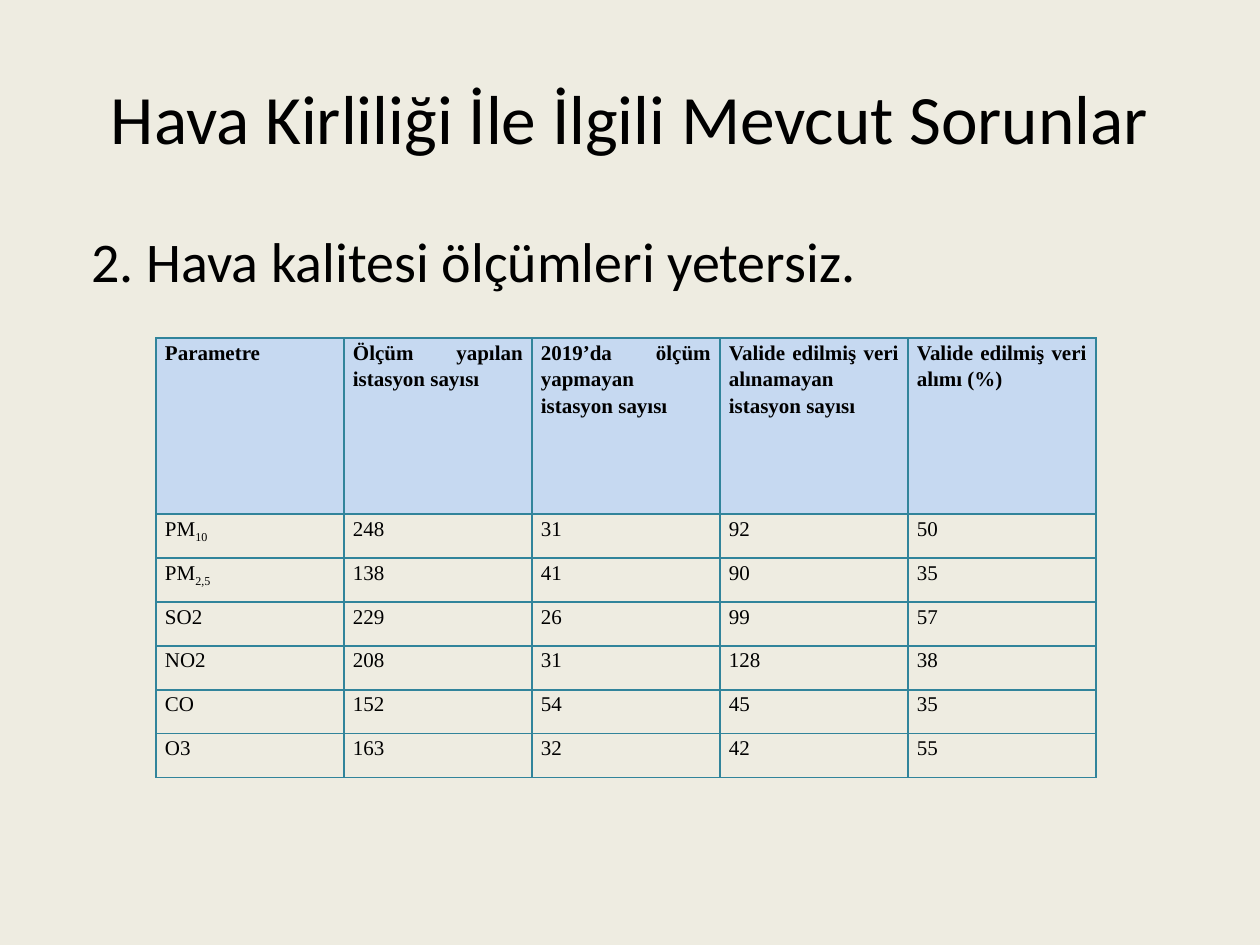
from dataclasses import dataclass
from lxml import etree
from pptx import Presentation
from pptx.dml.color import RGBColor
from pptx.enum.text import MSO_ANCHOR, PP_ALIGN
from pptx.oxml.ns import qn
from pptx.util import Pt


@dataclass(frozen=True)
class Theme:
    background: RGBColor = RGBColor.from_string("EEECE1")
    ink: RGBColor = RGBColor.from_string("000000")
    header: RGBColor = RGBColor.from_string("C6D9F1")
    border: str = "31849B"
    heading_font: str = "Calibri"
    table_font: str = "Times New Roman"
    title_size: float = 39.6
    body_size: float = 32
    table_size: float = 12


theme = Theme()
SCALE = 914400 / 126


def px(length):
    return round(length * SCALE)


def add_run(paragraph, text, font, size, bold=False):
    run = paragraph.add_run()
    run.text = text
    for name, value in {"name": font, "size": Pt(size), "bold": bold}.items():
        setattr(run.font, name, value)
    run.font.color.rgb = theme.ink
    return run


prs = Presentation()
prs.slide_width, prs.slide_height = px(1260), px(945)
slide = prs.slides.add_slide(prs.slide_layouts[6])
slide.background.fill.solid()
slide.background.fill.fore_color.rgb = theme.background

headings = [
    ("Hava Kirliliği İle İlgili Mevcut Sorunlar", 38, 158, theme.title_size,
     MSO_ANCHOR.MIDDLE, {"alignment": PP_ALIGN.CENTER}, {}),
    ("2. Hava kalitesi ölçümleri yetersiz.", 220, 118, theme.body_size,
     MSO_ANCHOR.TOP, {"alignment": PP_ALIGN.LEFT, "space_before": Pt(3.6)},
     {"marL": px(87), "indent": px(-71)}),
]
for text, top, height, size, anchor, layout, indents in headings:
    frame = slide.shapes.add_textbox(px(63), px(top), px(1134), px(height)).text_frame
    frame.word_wrap = True
    frame.vertical_anchor = anchor
    paragraph = frame.paragraphs[0]
    for name, value in layout.items():
        setattr(paragraph, name, value)
    for name, value in indents.items():
        paragraph._p.get_or_add_pPr().set(name, str(value))
    add_run(paragraph, text, theme.heading_font, size)

measurements = [
    ("Parametre", "Ölçüm yapılan istasyon sayısı",
     "2019’da ölçüm yapmayan istasyon sayısı",
     "Valide edilmiş veri alınamayan istasyon sayısı",
     "Valide edilmiş veri alımı (%)"),
    (("PM", "10"), "248", "31", "92", "50"),
    (("PM", "2,5"), "138", "41", "90", "35"),
    ("SO2", "229", "26", "99", "57"),
    ("NO2", "208", "31", "128", "38"),
    ("CO", "152", "54", "45", "35"),
    ("O3", "163", "32", "42", "55"),
]
row_heights = [176] + [44] * 6
table = slide.shapes.add_table(
    len(measurements), 5, px(156), px(338), px(940), px(sum(row_heights))).table
table.first_row = table.horz_banding = False
for column in table.columns:
    column.width = px(188)
for row, height in zip(table.rows, row_heights):
    row.height = px(height)

cell_format = {
    "margin_left": px(9), "margin_right": px(9),
    "margin_top": 0, "margin_bottom": 0,
    "vertical_anchor": MSO_ANCHOR.TOP,
}
for row_index, values in enumerate(measurements):
    is_header = row_index == 0
    for column_index, value in enumerate(values):
        cell = table.cell(row_index, column_index)
        for name, setting in cell_format.items():
            setattr(cell, name, setting)
        for side in ("lnL", "lnR", "lnT", "lnB"):
            line = etree.SubElement(cell._tc.get_or_add_tcPr(), qn(f"a:{side}"), w=str(Pt(1)))
            etree.SubElement(etree.SubElement(line, qn("a:solidFill")),
                             qn("a:srgbClr"), val=theme.border)
        if is_header:
            cell.fill.solid()
            cell.fill.fore_color.rgb = theme.header
        else:
            cell.fill.background()
        paragraph = cell.text_frame.paragraphs[0]
        paragraph.alignment = PP_ALIGN.JUSTIFY
        paragraph.line_spacing = 1.15
        label, subscript = value if isinstance(value, tuple) else (value, None)
        add_run(paragraph, label, theme.table_font, theme.table_size, is_header)
        if subscript:
            lowered = add_run(paragraph, subscript, theme.table_font, theme.table_size)
            lowered._r.get_or_add_rPr().set("baseline", "-25000")

prs.save("out.pptx")
